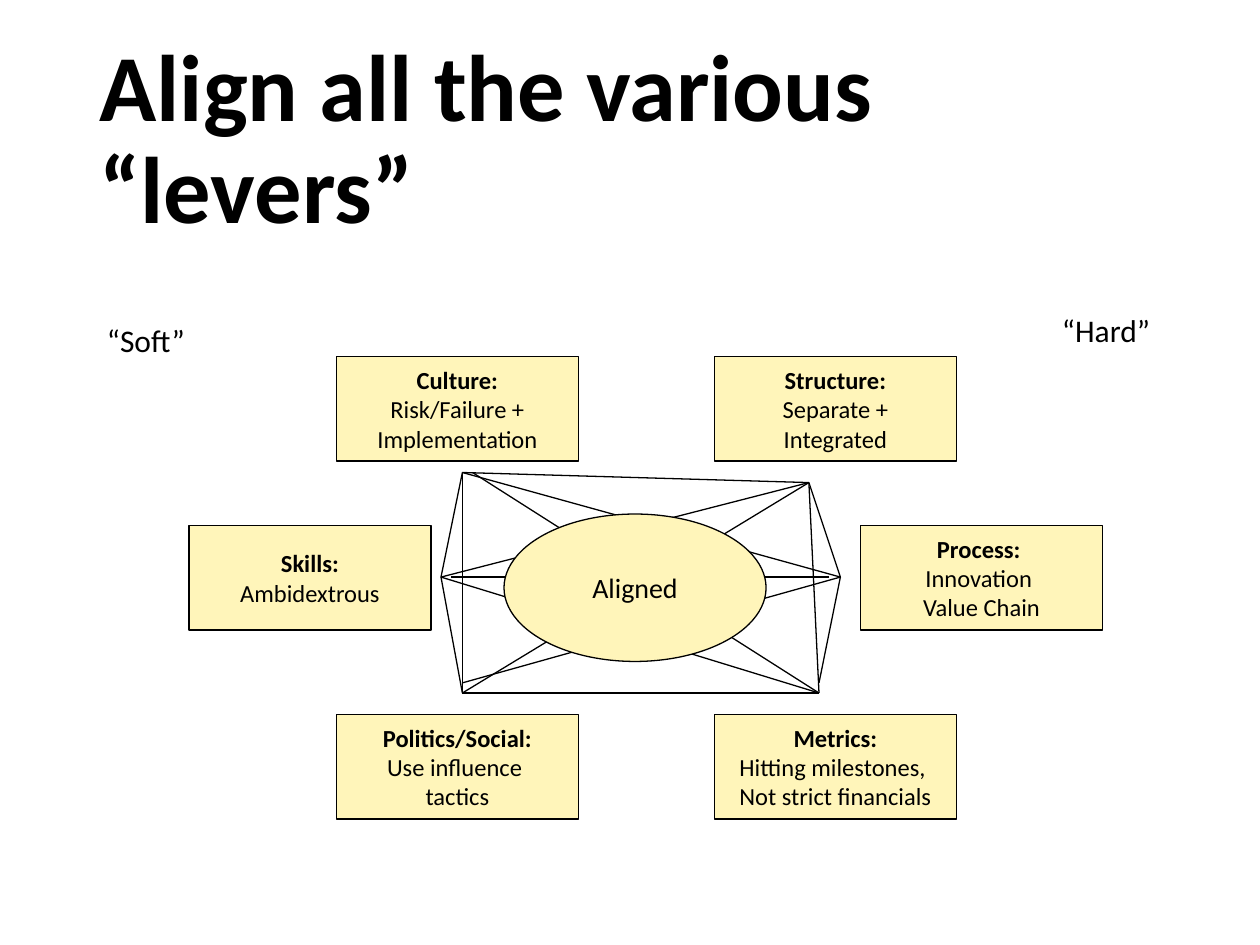
from typing import NamedTuple

from lxml.etree import SubElement
from pptx import Presentation
from pptx.dml.color import RGBColor
from pptx.enum.shapes import MSO_CONNECTOR, MSO_SHAPE
from pptx.enum.text import MSO_ANCHOR, PP_ALIGN
from pptx.oxml.ns import qn
from pptx.util import Inches, Pt

INK = "000000"
CREAM = "FFF5BA"
BOX_W, BOX_H = 1.92, 0.83


class Lever(NamedTuple):
    left: float
    top: float
    head: str
    lines: list[str]


class Dot(NamedTuple):
    x: float
    y: float


LEVERS = [
    Lever(6.83, 4.17, "Process: ", ["Innovation ", "Value Chain"]),
    Lever(5.67, 2.83, "Structure:", ["Separate +", "Integrated"]),
    Lever(2.67, 2.83, "Culture:", ["Risk/Failure +", "Implementation"]),
    Lever(1.5, 4.17, "Skills:", ["Ambidextrous"]),
    Lever(5.67, 5.67, "Metrics:", ["Hitting milestones, ", "Not strict financials"]),
    Lever(2.67, 5.67, "Politics/Social:", ["Use influence ", "tactics"]),
]

CULTURE, STRUCTURE = Dot(3.67, 3.75), Dot(6.42, 3.83)
SKILLS, PROCESS = Dot(3.5, 4.58), Dot(6.67, 4.58)
SOCIAL, METRICS = Dot(3.67, 5.5), Dot(6.5, 5.5)

LINKS = [
    (Dot(3.58, 4.58), Dot(6.58, 4.58)),
    (CULTURE, SOCIAL),
    (SOCIAL, STRUCTURE),
    (METRICS, Dot(3.75, 3.75)),
    (STRUCTURE, METRICS),
    (PROCESS, Dot(6.5, 5.42)),
    (PROCESS, STRUCTURE),
    (SOCIAL, METRICS),
    (CULTURE, STRUCTURE),
    (SOCIAL, SKILLS),
    (SKILLS, CULTURE),
    (METRICS, SKILLS),
    (Dot(3.67, 5.42), PROCESS),
    (CULTURE, PROCESS),
    (STRUCTURE, SKILLS),
]


def color(code: str) -> RGBColor:
    return RGBColor.from_string(code)


def write(frame, lines: list[str], size=14, align=PP_ALIGN.LEFT,
          anchor=MSO_ANCHOR.TOP, wrap=True, bold=0, space=1.0) -> None:
    """Fill a text frame, with the first `bold` lines in bold."""
    frame.word_wrap = wrap
    frame.vertical_anchor = anchor
    for i, line in enumerate(lines):
        para = frame.paragraphs[0] if i == 0 else frame.add_paragraph()
        para.alignment = align
        para.line_spacing = space
        run = para.add_run()
        run.text = line
        font = run.font
        font.name, font.size, font.bold = "Calibri", Pt(size), i < bold
        font.color.rgb = color(INK)


def place(shape, left: float, top: float, width: float, height: float) -> None:
    shape.left, shape.top = Inches(left), Inches(top)
    shape.width, shape.height = Inches(width), Inches(height)


def node(slide, kind, left: float, top: float, width: float, height: float,
         lines: list[str], **form) -> None:
    """Draw a cream shape with centred text."""
    shape = slide.shapes.add_shape(
        kind, Inches(left), Inches(top), Inches(width), Inches(height))
    shape.shadow.inherit = False
    shape.fill.solid()
    shape.fill.fore_color.rgb = color(CREAM)
    shape.line.color.rgb = color(INK)
    shape.line.width = Pt(0.75)
    write(shape.text_frame, lines, align=PP_ALIGN.CENTER,
          anchor=MSO_ANCHOR.MIDDLE, wrap=False, **form)


def link(slide, start: Dot, end: Dot) -> None:
    line = slide.shapes.add_connector(
        MSO_CONNECTOR.STRAIGHT, Inches(start.x), Inches(start.y),
        Inches(end.x), Inches(end.y))
    line.line.color.rgb = color(INK)
    line.line.width = Pt(0.75)
    SubElement(line._element.spPr, qn("a:effectLst"))


def label(slide, left: float, top: float, text: str) -> None:
    box = slide.shapes.add_textbox(
        Inches(left), Inches(top), Inches(1.31), Inches(0.4))
    write(box.text_frame, [text], size=18)


def main() -> None:
    deck = Presentation()
    deck.slide_width, deck.slide_height = Inches(10), Inches(7.5)
    slide = deck.slides.add_slide(deck.slide_layouts[5])

    title = slide.shapes.title
    place(title, 0.69, 0.4, 8.62, 1.45)
    write(title.text_frame, ["Align all the various “levers”"], size=54,
          anchor=MSO_ANCHOR.MIDDLE, bold=1, space=0.9)

    for lever in LEVERS:
        node(slide, MSO_SHAPE.RECTANGLE, lever.left, lever.top, BOX_W, BOX_H,
             [lever.head, *lever.lines], bold=1)
    for start, end in LINKS:
        link(slide, start, end)
    node(slide, MSO_SHAPE.OVAL, 4, 4.08, 2.08, 1.17, ["Aligned"], size=16)

    label(slide, 0.75, 2.5, "“Soft”")
    label(slide, 8.33, 2.42, "“Hard”")
    deck.save("out.pptx")


if __name__ == "__main__":
    main()
